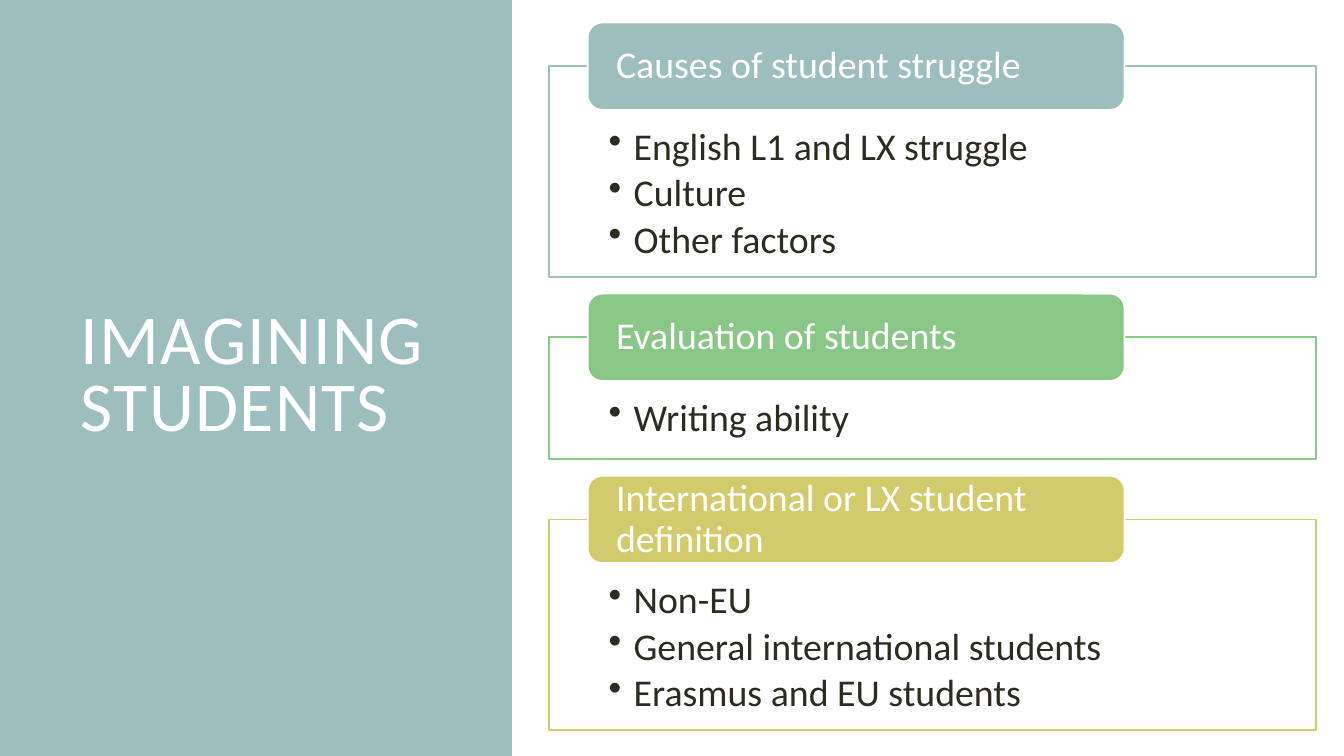
"""Builds the slide about how students are imagined."""
import pptx
import pptx.dml.color
import pptx.enum.shapes
import pptx.enum.text
import pptx.util
from lxml import etree

Cm, Pt = pptx.util.Cm, pptx.util.Pt
RGBColor = pptx.dml.color.RGBColor
SHAPE = pptx.enum.shapes.MSO_SHAPE
ANCHOR = pptx.enum.text.MSO_ANCHOR

WHITE = RGBColor(0xFF, 0xFF, 0xFF)
INK = RGBColor(0x2E, 0x2B, 0x21)
TEAL = RGBColor(0x9C, 0xBE, 0xBD)
GREEN = RGBColor(0x88, 0xC7, 0x85)
OLIVE = RGBColor(0xD2, 0xCB, 0x6C)

TOPICS = [
    ("Causes of student struggle", TEAL,
     ["English L1 and LX struggle", "Culture", "Other factors"]),
    ("Evaluation of students", GREEN, ["Writing ability"]),
    ("International or LX student definition", OLIVE,
     ["Non-EU", "General international students", "Erasmus and EU students"]),
]


def add_block(s, kind, box, fill, line=None):
    """Draw a flat shape in a box given in centimetres."""
    sp = s.shapes.add_shape(kind, *map(Cm, box))
    sp.shadow.inherit = False
    sp.fill.solid()
    sp.fill.fore_color.rgb = fill
    if line is None:
        sp.line.fill.background()
    else:
        sp.line.color.rgb = line
        sp.line.width = Pt(1.25)
    return sp


def set_text(sp, text, size=27, color=WHITE, anchor=ANCHOR.MIDDLE,
             insets=(0.25, 0.13, 0.25, 0.13), leading=0.9, after=0,
             bullet=False, tracking=0):
    """Fill a shape with one paragraph per line of text."""
    tf = sp.text_frame
    tf.word_wrap = True
    tf.auto_size = pptx.enum.text.MSO_AUTO_SIZE.NONE
    tf.vertical_anchor = anchor
    tf.margin_left, tf.margin_top, tf.margin_right, tf.margin_bottom = map(Cm, insets)
    for i, words in enumerate(text.split("\n")):
        p = tf.paragraphs[0] if i == 0 else tf.add_paragraph()
        p.alignment = pptx.enum.text.PP_ALIGN.LEFT
        p.line_spacing = leading
        p.space_before, p.space_after = Pt(0), Pt(after)
        if bullet:
            pPr = p._p.get_or_add_pPr()
            pPr.set("marL", str(Cm(0.63)))
            pPr.set("indent", str(-Cm(0.63)))
            etree.SubElement(pPr, pptx.oxml.ns.qn("a:buChar")).set("char", "•")
        r = p.add_run()
        r.text = words
        r.font.name = "Calibri"
        r.font.size = Pt(size)
        r.font.color.rgb = color
        if tracking:
            r._r.get_or_add_rPr().set("spc", str(tracking))


def add_title_panel(s, left, top, width, height):
    """Place the coloured panel with the slide title on it."""
    panel = add_block(s, SHAPE.RECTANGLE, (left, top, width, height), TEAL)
    title = s.shapes.title
    title._element.addprevious(panel._element)
    title.left, title.top = Cm(left + 1.78), Cm(top + 1.78)
    title.width, title.height = Cm(width - 3.4), Cm(height - 3.58)
    set_text(title, "IMAGINING STUDENTS", size=50, leading=0.8, tracking=100)


def add_topic(s, left, top, width, height, heading, color, points):
    """Place an outlined list with its heading tab astride the top edge."""
    body = add_block(s, SHAPE.RECTANGLE, (left, top, width, height), WHITE, color)
    set_text(body, "\n".join(points), color=INK, anchor=ANCHOR.TOP,
             insets=(1.5, 1.55, 1.5, 0.53), after=4, bullet=True)
    tab_height = 2.2
    tab = add_block(s, SHAPE.ROUNDED_RECTANGLE,
                    (left + 0.97, top - tab_height / 2, width * 0.7, tab_height),
                    color, WHITE)
    set_text(tab, heading, insets=(0.61, 0, 0.61, 0))


def add_topics(s, left, top, width, gap):
    """Stack the topics, each as tall as its list needs."""
    for heading, color, points in TOPICS:
        height = 1.95 + 1.12 * len(points)
        add_topic(s, left, top, width, height, heading, color, points)
        top += height + gap


def main():
    """Build and save the presentation."""
    prs = pptx.Presentation()
    prs.slide_width, prs.slide_height = Cm(33.87), Cm(19.05)
    s = prs.slides.add_slide(prs.slide_layouts[5])
    add_title_panel(s, 0, 0, 12.9, 19.05)
    add_topics(s, 13.84, 1.67, 19.33, 1.52)
    prs.save("out.pptx")


if __name__ == "__main__":
    main()
